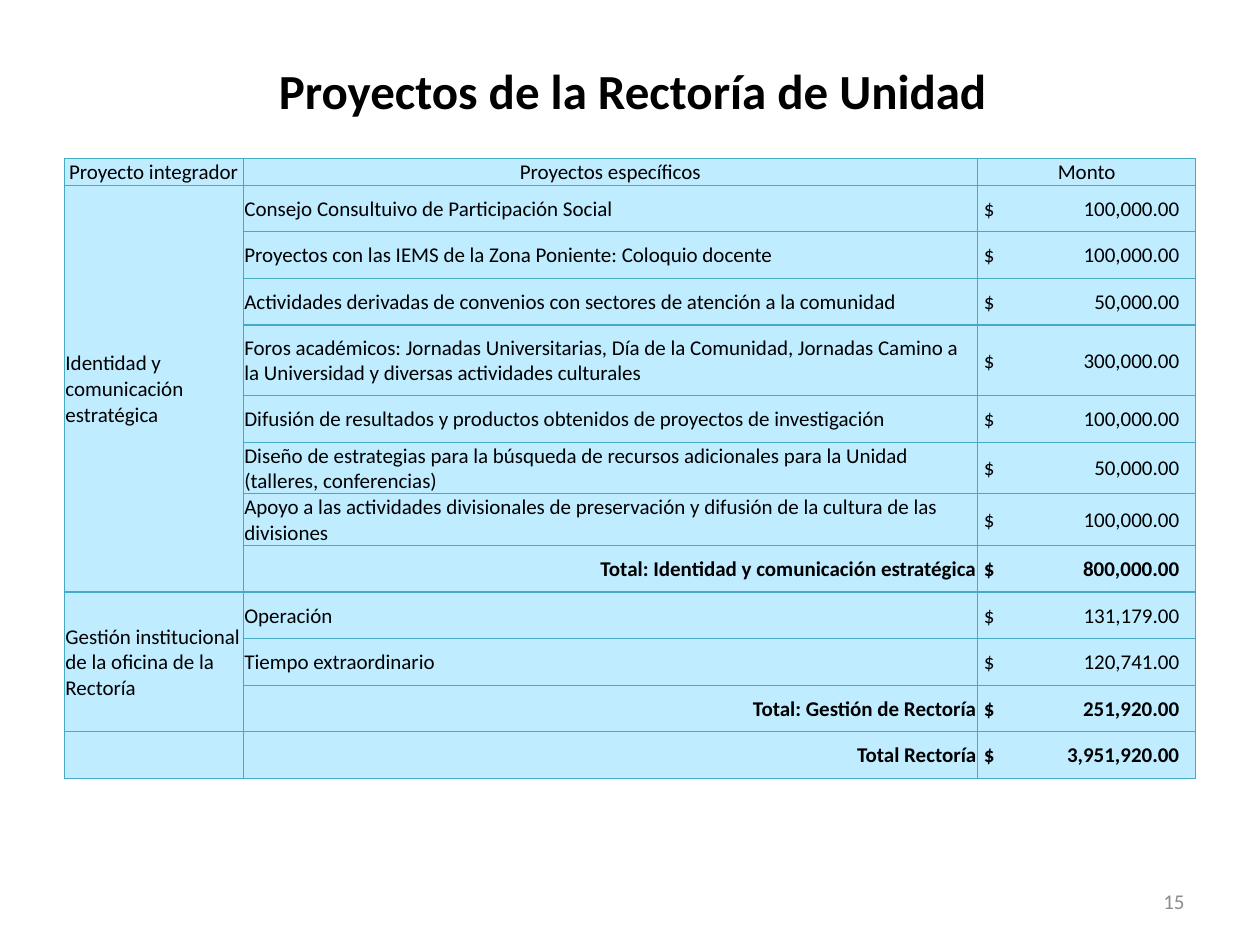
from dataclasses import dataclass

import lxml.etree
import pptx
import pptx.dml.color
import pptx.enum.text
import pptx.oxml.ns
import pptx.util

Inches = pptx.util.Inches
Pt = pptx.util.Pt
ALIGN = pptx.enum.text.PP_ALIGN
MIDDLE = pptx.enum.text.MSO_ANCHOR.MIDDLE

CELL_FILL = "BFECFF"
BORDER = "46AAC5"
COLUMN_WIDTHS = (1.42, 5.83, 1.73)
HEADER_HEIGHT = 0.21
AMOUNT_INSET = 0.05
AMOUNT_TAB = 1.55


@dataclass
class Project:
    name: str
    amount: str
    height: float = 0.37
    is_total: bool = False


@dataclass
class Group:
    name: str
    projects: list[Project]


HEADERS = ("Proyecto integrador", "Proyectos específicos", "Monto")
GROUPS = [
    Group("Identidad y comunicación estratégica", [
        Project("Consejo Consultuivo de Participación Social", "100,000.00"),
        Project("Proyectos con las IEMS de la Zona Poniente: Coloquio docente", "100,000.00"),
        Project("Actividades derivadas de convenios con sectores de atención a la comunidad",
                "50,000.00"),
        Project("Foros académicos: Jornadas Universitarias, Día de la Comunidad, Jornadas "
                "Camino a la Universidad y diversas actividades culturales", "300,000.00", 0.56),
        Project("Difusión de resultados y productos obtenidos de proyectos de investigación",
                "100,000.00"),
        Project("Diseño de estrategias para la búsqueda de recursos adicionales para la Unidad "
                "(talleres, conferencias)", "50,000.00", 0.41),
        Project("Apoyo a las actividades divisionales de preservación y difusión de la cultura "
                "de las divisiones", "100,000.00", 0.41),
        Project("Total: Identidad y comunicación estratégica", "800,000.00", is_total=True),
    ]),
    Group("Gestión institucional de la oficina de la Rectoría", [
        Project("Operación", "131,179.00"),
        Project("Tiempo extraordinario", "120,741.00"),
        Project("Total: Gestión de Rectoría", "251,920.00", is_total=True),
    ]),
    Group("", [Project("Total Rectoría", "3,951,920.00", is_total=True)]),
]


def rgb(color: str) -> pptx.dml.color.RGBColor:
    return pptx.dml.color.RGBColor.from_string(color)


def write(paragraph, text: str, size: float = 12, color: str = "000000",
          bold: bool = False, align=ALIGN.LEFT) -> None:
    paragraph.alignment = align
    run = paragraph.add_run()
    run.text = text
    run.font.color.rgb = rgb(color)
    for name, value in {"name": "Calibri", "size": Pt(size), "bold": bold}.items():
        setattr(run.font, name, value)


def place(shape, left: float, top: float, width: float, height: float) -> None:
    box = {"left": left, "top": top, "width": width, "height": height}
    for name, value in box.items():
        setattr(shape, name, Inches(value))


def add_child(parent, tag: str, **attributes: str):
    return lxml.etree.SubElement(parent, pptx.oxml.ns.qn(tag), attributes)


def style_cell(cell) -> None:
    """Set the insets, the four borders and the fill."""
    cell.vertical_anchor = MIDDLE
    insets = {"margin_left": 0.01, "margin_right": 0.01, "margin_top": 0.01, "margin_bottom": 0}
    for name, value in insets.items():
        setattr(cell, name, Inches(value))
    properties = cell._tc.get_or_add_tcPr()
    for side in ("a:lnL", "a:lnR", "a:lnT", "a:lnB"):
        line = add_child(properties, side, w=str(Pt(0.75)))
        add_child(add_child(line, "a:solidFill"), "a:srgbClr", val=BORDER)
    cell.fill.solid()
    cell.fill.fore_color.rgb = rgb(CELL_FILL)


def write_amount(cell, project: Project) -> None:
    """Put the currency sign at the left and the number at a right tab."""
    cell.margin_left = Inches(AMOUNT_INSET)
    paragraph = cell.text_frame.paragraphs[0]
    tabs = add_child(paragraph._p.get_or_add_pPr(), "a:tabLst")
    add_child(tabs, "a:tab", pos=str(Inches(AMOUNT_TAB)), algn="r")
    write(paragraph, f"$\t{project.amount}", bold=project.is_total)


def add_budget_table(slide) -> None:
    projects = [project for group in GROUPS for project in group.projects]
    heights = [HEADER_HEIGHT] + [project.height for project in projects]
    frame = slide.shapes.add_table(
        len(heights), len(COLUMN_WIDTHS), Inches(0.51), Inches(1.26),
        Inches(sum(COLUMN_WIDTHS)), Inches(sum(heights)))
    table = frame.table
    for column, width in zip(table.columns, COLUMN_WIDTHS):
        column.width = Inches(width)
    for row, height in zip(table.rows, heights):
        row.height = Inches(height)
    for cell in table.iter_cells():
        style_cell(cell)

    for column, header in enumerate(HEADERS):
        write(table.cell(0, column).text_frame.paragraphs[0], header, align=ALIGN.CENTER)

    first = 1
    for group in GROUPS:
        last = first + len(group.projects) - 1
        group_cell = table.cell(first, 0)
        if last > first:
            group_cell.merge(table.cell(last, 0))
        if group.name:
            write(group_cell.text_frame.paragraphs[0], group.name)
        for row, project in enumerate(group.projects, first):
            write(table.cell(row, 1).text_frame.paragraphs[0], project.name,
                  bold=project.is_total,
                  align=ALIGN.RIGHT if project.is_total else ALIGN.LEFT)
            write_amount(table.cell(row, 2), project)
        first = last + 1


def add_title(slide) -> None:
    title = slide.shapes.title
    place(title, 1.93, 0.31, 6.18, 0.68)
    frame = title.text_frame
    settings = {"margin_top": Inches(0.17), "margin_bottom": Inches(0.04), "word_wrap": True,
                "vertical_anchor": MIDDLE, "auto_size": pptx.enum.text.MSO_AUTO_SIZE.NONE}
    for name, value in settings.items():
        setattr(frame, name, value)
    write(frame.paragraphs[0], "Proyectos de la Rectoría de Unidad", 28, bold=True,
          align=ALIGN.CENTER)


def add_page_number(slide) -> None:
    page_number = slide.shapes.add_textbox(0, 0, 0, 0)
    place(page_number, 7.17, 6.95, 2.33, 0.4)
    page_number.text_frame.word_wrap = True
    page_number.text_frame.vertical_anchor = MIDDLE
    write(page_number.text_frame.paragraphs[0], "15", color="8C8C8C", align=ALIGN.RIGHT)


def main() -> None:
    presentation = pptx.Presentation()
    presentation.slide_width = Inches(10)
    presentation.slide_height = Inches(7.5)
    slide = presentation.slides.add_slide(presentation.slide_layouts.get_by_name("Title Only"))
    add_title(slide)
    add_page_number(slide)
    add_budget_table(slide)
    presentation.save("out.pptx")


if __name__ == "__main__":
    main()
